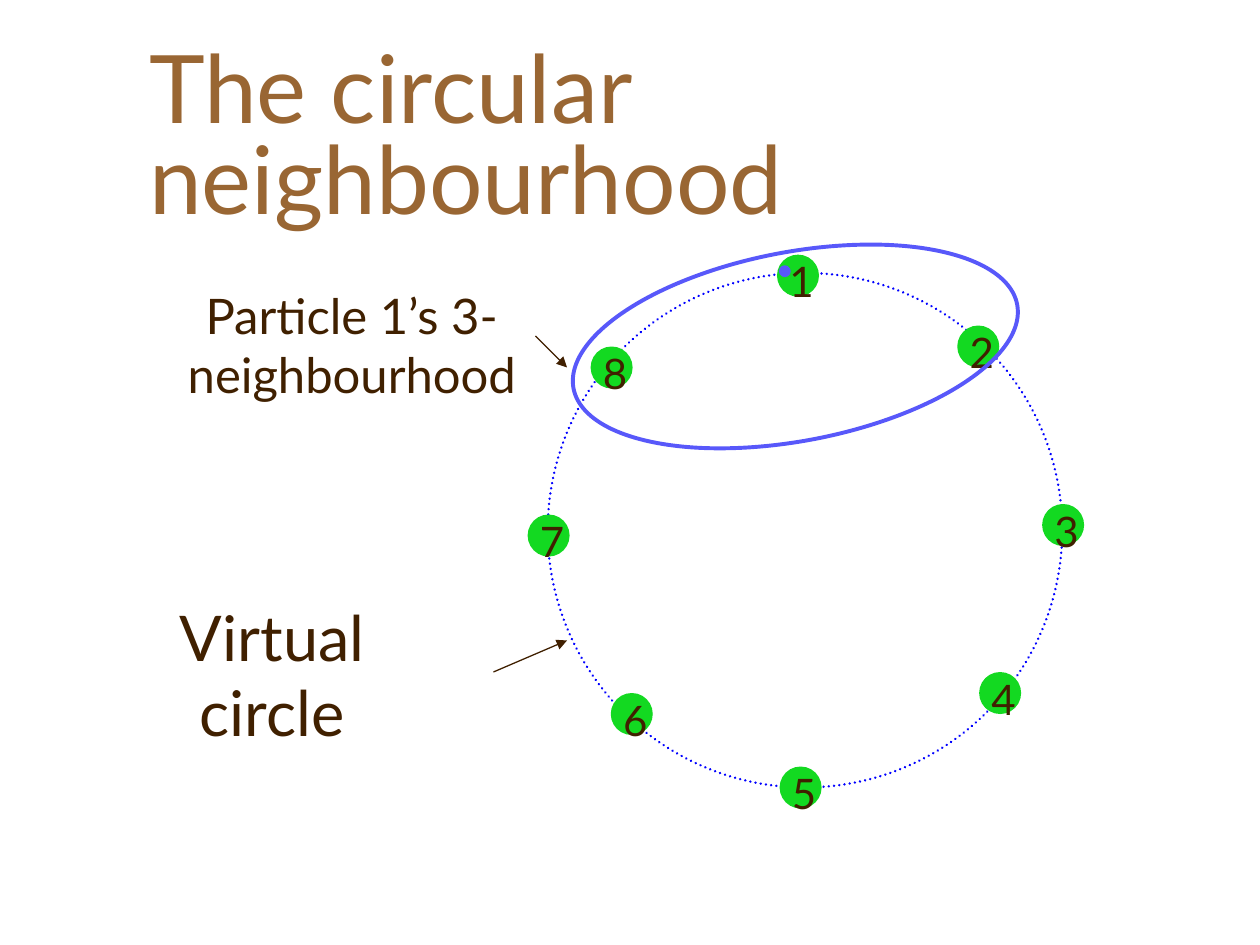
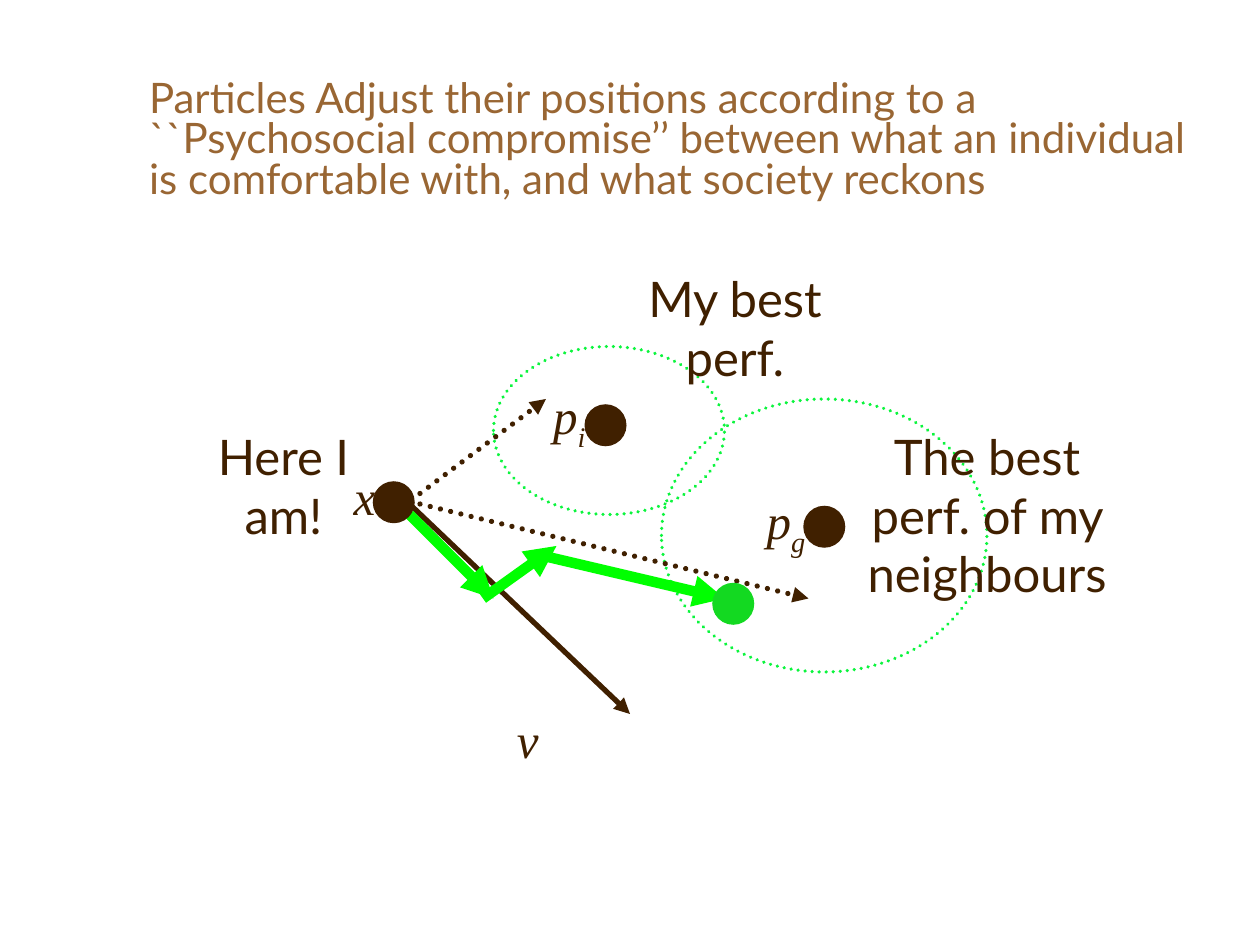
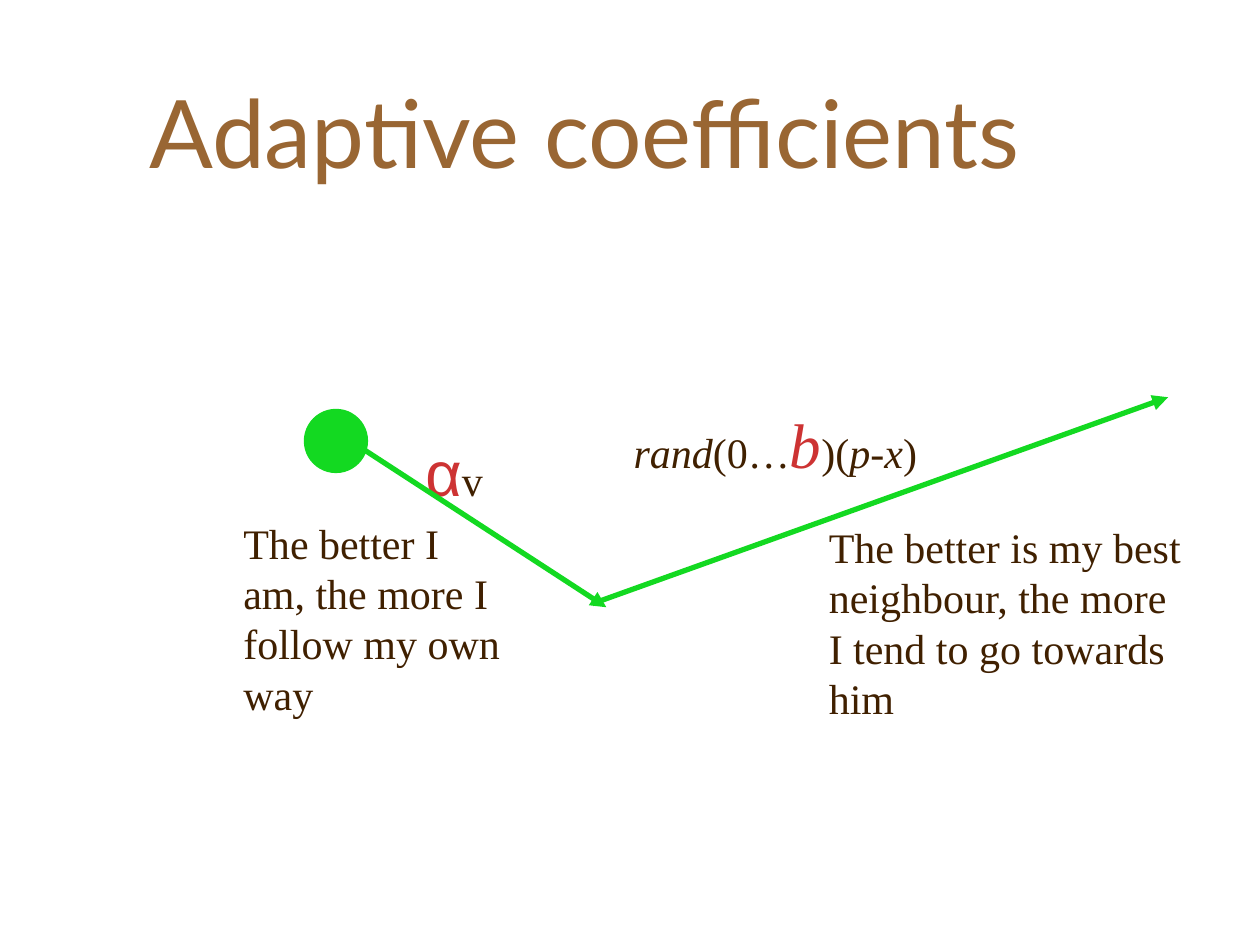
"""Build three slides on particle swarm neighbourhoods and adaptive coefficients."""
from dataclasses import dataclass

from pptx import Presentation
from pptx.dml.color import RGBColor as RGB
from pptx.enum.dml import MSO_LINE
from pptx.enum.shapes import MSO_CONNECTOR, MSO_SHAPE
from pptx.enum.text import MSO_ANCHOR as ANCHOR, MSO_AUTO_SIZE, PP_ALIGN as ALIGN
from pptx.oxml.ns import qn
from pptx.oxml.xmlchemy import OxmlElement
from pptx.util import Pt


@dataclass(frozen=True)
class Theme:
    title: str = "996633"
    ink: str = "402000"
    green: str = "13D921"
    step: str = "00FF00"
    zone: str = "0BF53D"
    circle: str = "0000FF"
    focus: str = "5858FA"
    accent: str = "CD3333"
    sans: str = "Lato"
    serif: str = "Times New Roman"
    symbol: str = "Arial"
    huge: int = 54
    large: int = 36
    label: int = 28
    body: int = 24


T = Theme()


class Deck:
    def __init__(self):
        self.prs = Presentation()
        self.prs.slide_width, self.prs.slide_height = Pt(720), Pt(540)
        self.s = None

    def slide(self, title, size=T.huge):
        self.s = self.prs.slides.add_slide(self.prs.slide_layouts[5])
        sp = self.s.shapes.title
        sp.left, sp.top, sp.width, sp.height = Pt(78), Pt(36), Pt(612), Pt(90)
        tf = sp.text_frame
        tf.word_wrap, tf.auto_size = True, MSO_AUTO_SIZE.NONE
        tf.vertical_anchor = ANCHOR.MIDDLE
        p = tf.paragraphs[0]
        p.text, p.alignment, p.line_spacing = title, ALIGN.LEFT, 0.8
        self.font(p.font, T.sans, size, T.title)

    def font(self, font, name, size, color, italic=False):
        font.name, font.size, font.italic = name, Pt(size), italic
        font.color.rgb = RGB.from_string(color)

    def box(self, x, y, w, h, align, anchor, wrap):
        tf = self.s.shapes.add_textbox(Pt(x), Pt(y), Pt(w), Pt(h)).text_frame
        tf.word_wrap, tf.vertical_anchor = wrap, anchor
        p = tf.paragraphs[0]
        p.alignment = align
        return tf, p

    def text(self, text, x, y, w, h, size=T.label, name=T.sans, align=ALIGN.CENTER,
             anchor=ANCHOR.TOP, wrap=True, italic=False):
        tf, p = self.box(x, y, w, h, align, anchor, wrap)
        p.text = text
        self.font(p.font, name, size, T.ink, italic)
        return tf

    def formula(self, x, y, w, h, *runs):
        p = self.box(x, y, w, h, ALIGN.LEFT, ANCHOR.TOP, True)[1]
        for text, name, size, color, italic in runs:
            r = p.add_run()
            r.text = text
            self.font(r.font, name, size, color, italic)
        return p

    def symbol(self, x, y, w, letter, index=""):
        runs = [(c, T.serif, T.label, T.ink, True) for c in letter + index]
        p = self.formula(x, y, w, 41, *runs)
        for r in p.runs[1:]:
            r.font._element.set("baseline", "-25000")

    def stroke(self, sp, color, width, dotted):
        sp.line.color.rgb, sp.line.width = RGB.from_string(color), Pt(width)
        if dotted:
            sp.line.dash_style = MSO_LINE.ROUND_DOT
            sp._element.spPr.find(qn("a:ln")).set("cap", "rnd")

    def oval(self, x, y, w, h, fill=None, line=None, width=0.75, dotted=False):
        sp = self.s.shapes.add_shape(MSO_SHAPE.OVAL, Pt(x), Pt(y), Pt(w), Pt(h))
        sp.shadow.inherit = False
        if fill:
            sp.fill.solid()
            sp.fill.fore_color.rgb = RGB.from_string(fill)
        else:
            sp.fill.background()
        if line:
            self.stroke(sp, line, width, dotted)
        else:
            sp.line.fill.background()
        return sp

    def dot(self, x, y, fill):
        self.oval(x, y, 24, 24, fill)

    def arrow(self, start, end, color=T.ink, width=0.75, dotted=False):
        sp = self.s.shapes.add_connector(MSO_CONNECTOR.STRAIGHT, *map(Pt, start + end))
        self.stroke(sp, color, width, dotted)
        tail = OxmlElement("a:tailEnd")
        tail.set("type", "triangle")
        sp._element.spPr.find(qn("a:ln")).append(tail)
        sp._element.spPr.append(OxmlElement("a:effectLst"))


def circular_neighbourhood(d):
    d.slide("The circular neighbourhood")
    tf = d.text("Virtual circle", 96, 360, 181, 50, T.large, anchor=ANCHOR.MIDDLE)
    tf.margin_left, tf.margin_right = Pt(0), Pt(62)
    d.oval(313, 156, 294, 294, line=T.circle, width=1.5, dotted=True)
    particles = [(444, 145.5), (547, 186), (595.5, 288), (559.5, 384),
                 (445.5, 438), (349, 396), (301.5, 294), (337.5, 198)]
    for x, y in particles:
        d.dot(x, y, T.green)
    for number, (x, y) in enumerate(particles, 1):
        d.text(str(number), x, y - 3, 25, 36, T.body, anchor=ANCHOR.MIDDLE, wrap=False)
    d.oval(325.5, 144, 258, 108, line=T.focus, width=2.25).rotation = 349.3
    d.text("Particle 1’s 3-neighbourhood", 90, 160, 222, 74, anchor=ANCHOR.MIDDLE)
    d.arrow((282, 384), (324, 366))
    d.arrow((306, 192), (324, 210))
    d.oval(445.5, 152, 6, 6, T.focus, T.focus)


def psychosocial_compromise(d):
    d.slide("Particles Adjust their positions according to a ``Psychosocial compromise’’ "
            "between what an individual is comfortable with, and what society reckons", T.body)
    d.oval(378, 228, 186, 156, line=T.zone, width=2, dotted=True)
    d.oval(282, 198, 132, 96, line=T.zone, width=2, dotted=True)
    d.text("Here I am!", 102, 240, 120, 74)
    d.text("The best perf. of my neighbours", 480, 240, 168, 108)
    d.text("My best perf.", 360, 150, 120, 74)
    d.arrow((234, 288), (360, 408), width=3)
    for start, end in [((240, 282), (312, 228)), ((240, 288), (462, 342))]:
        d.arrow(start, end, width=3, dotted=True)
    for start, end in [((234, 294), (282, 342)), ((276, 342), (318, 312)),
                       ((312, 318), (414, 342))]:
        d.arrow(start, end, T.step, 6)
    d.symbol(195, 263, 42, "x")
    d.symbol(431, 277, 66, "p", "g")
    d.symbol(309, 217, 42, "p", "i")
    d.text("v", 288, 402, 27, 41, name=T.serif, anchor=ANCHOR.MIDDLE, wrap=False, italic=True)
    for x, y in [(213, 275), (459, 289), (334, 231)]:
        d.dot(x, y, T.ink)
    d.dot(407, 333, T.green)


def adaptive_coefficients(d):
    d.slide("Adaptive coefficients")
    for text, x, y, w in [
        ("The better I am, the more I follow my own way", 132, 292, 161),
        ("The better is my best neighbour, the more I tend to go towards him", 466.5, 294.5, 220),
    ]:
        d.text(text, x, y, w, 122, T.body, T.serif, ALIGN.LEFT)
    d.formula(236, 244, 83, 50, ("α", T.symbol, T.large, T.accent, False),
              ("v", T.serif, T.body, T.ink, False))
    plain, italic = [(T.serif, T.body, T.ink, slant) for slant in (False, True)]
    d.formula(355, 228, 213, 50, ("rand", *italic), ("(0…", *plain),
              ("b", T.serif, T.large, T.accent, True), (")(", *plain),
              ("p", *italic), ("-", *plain), ("x", *italic), (")", *plain))
    d.arrow((195, 248.5), (346.5, 347), T.green, 3)
    d.arrow((338.5, 345), (667.5, 227), T.green, 3)
    d.oval(174, 234, 36, 36, T.green, T.green)


def main():
    d = Deck()
    circular_neighbourhood(d)
    psychosocial_compromise(d)
    adaptive_coefficients(d)
    d.prs.save("out.pptx")


if __name__ == "__main__":
    main()
